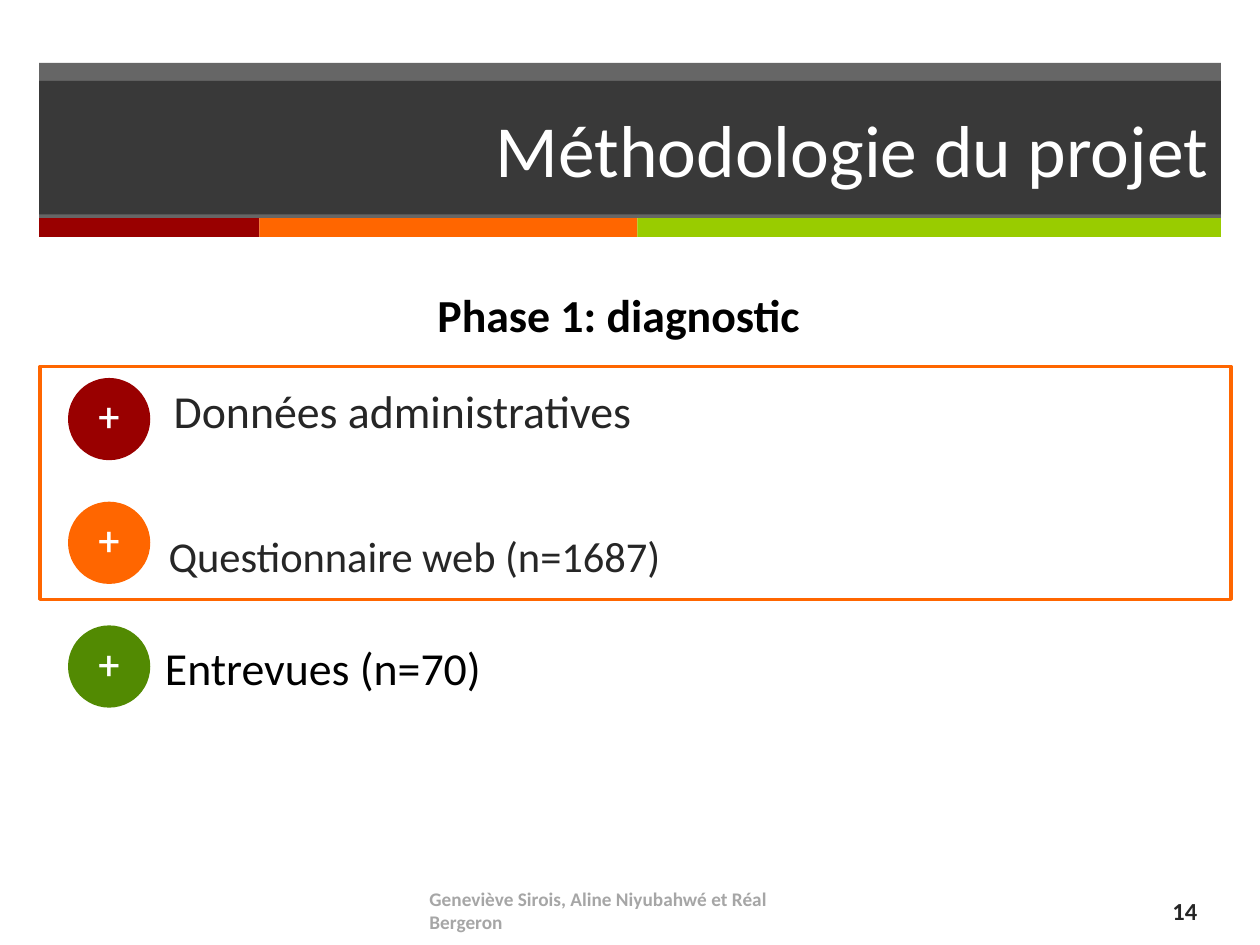
from lxml import etree
from pptx import Presentation
from pptx.dml.color import RGBColor
from pptx.enum.shapes import MSO_SHAPE
from pptx.enum.text import MSO_ANCHOR, MSO_AUTO_SIZE, PP_ALIGN
from pptx.oxml.ns import qn
from pptx.util import Pt

RECTANGLE, ELLIPSE = MSO_SHAPE.RECTANGLE, MSO_SHAPE.OVAL
TOP, MIDDLE = MSO_ANCHOR.TOP, MSO_ANCHOR.MIDDLE
LEFT, CENTER, RIGHT = PP_ALIGN.LEFT, PP_ALIGN.CENTER, PP_ALIGN.RIGHT
NO_AUTOFIT = MSO_AUTO_SIZE.NONE

DARK = RGBColor(0x26, 0x26, 0x26)
RED = RGBColor(0x99, 0x00, 0x00)
ORANGE = RGBColor(0xFF, 0x66, 0x00)
LIME = RGBColor(0x99, 0xCC, 0x00)
GREEN = RGBColor(0x52, 0x8A, 0x02)
GRAY = RGBColor(0xA6, 0xA6, 0xA6)
BLACK = RGBColor(0x00, 0x00, 0x00)
WHITE = RGBColor(0xFF, 0xFF, 0xFF)


def write(shape, text, size, color, font="Calibri", bold=False, align=LEFT,
          anchor=MIDDLE, insets=(7.2, 3.6, 7.2, 3.6), spacing=1.0):
    frame = shape.text_frame
    frame.word_wrap = True
    frame.auto_size = NO_AUTOFIT
    frame.vertical_anchor = anchor
    (frame.margin_left, frame.margin_top,
     frame.margin_right, frame.margin_bottom) = map(Pt, insets)
    para = frame.paragraphs[0]
    para.alignment = align
    para.line_spacing = spacing
    span = para.add_run()
    span.text = text
    span.font.name = font
    span.font.size = Pt(size)
    span.font.bold = bold
    span.font.color.rgb = color


def add_text(page, box, text, size, color, **options):
    write(page.shapes.add_textbox(*map(Pt, box)), text, size, color, **options)


def paint(shape, color, opacity=100):
    shape.fill.solid()
    shape.fill.fore_color.rgb = color
    if opacity < 100:
        tone = shape._element.spPr.find(qn("a:solidFill"))[0]
        etree.SubElement(tone, qn("a:alpha"), val=str(opacity * 1000))


def add_filled(page, kind, box, color, opacity=100):
    shape = page.shapes.add_shape(kind, *map(Pt, box))
    shape.shadow.inherit = False
    shape.line.fill.background()
    paint(shape, color, opacity)
    return shape


def build_header(page, box, text):
    left, top, width, height = box
    stripe = 10.8

    # Translucent band with a colour stripe along its foot
    add_filled(page, RECTANGLE, (left, top, width, height - stripe), DARK, 70)
    start = left
    for color, length in ((RED, 126), (ORANGE, 216), (LIME, width - 342)):
        add_filled(page, RECTANGLE,
                   (start, top + height - stripe, length, stripe), color)
        start += length

    # Title, raised above the band
    title = page.shapes.title
    title.left, title.top = Pt(left), Pt(top + 10.2)
    title.width, title.height = Pt(width), Pt(76.3)
    paint(title, DARK, 70)
    write(title, text, 42, WHITE, align=RIGHT)
    page.shapes._spTree.append(title._element)


def build_methods(page, box):
    left, top, width, height = box

    # Frame around the first two methods
    frame = page.shapes.add_shape(RECTANGLE, *map(Pt, box))
    frame.shadow.inherit = False
    frame.fill.background()
    frame.line.color.rgb = ORANGE
    frame.line.width = Pt(2)

    # Each method: bullet colour, wording, size, text colour,
    # text offset from the frame, left inset, anchor
    methods = (
        (RED, "Données administratives", 26.2, DARK, 65.5, 5.8, 10.8, TOP),
        (ORANGE, "Questionnaire web (n=1687)", 24.3, DARK, 62.6, 90, 10.8, TOP),
        (GREEN, "Entrevues (n=70)", 26.2, BLACK, 62.6, 138.2, 8.7, MIDDLE),
    )
    diameter, pitch = 47, 70.7
    for row, (tint, text, size, color, across, down, inset,
              anchor) in enumerate(methods):
        bullet = add_filled(page, ELLIPSE,
                            (left + 15.9, top + 6.5 + row * pitch,
                             diameter, diameter), tint)
        write(bullet, "+", 22.5, WHITE, font="Roboto", align=CENTER,
              insets=(5, 2.9, 5, 2.9), spacing=0.9)
        add_text(page, (left + across, top + down, width - across + 9, 67),
                 text, size, color, anchor=anchor,
                 insets=(inset, 3.6, 5, 3.6))


def build_footer(page, box, authors, number):
    left, top, width, height = box
    add_text(page, (left, top, 243, height), authors, 11, GRAY, bold=True)
    add_text(page, (left + width - 162, top, 162, height), number, 14, DARK,
             bold=True, align=RIGHT)


def main():
    deck = Presentation()
    deck.slide_width, deck.slide_height = Pt(720), Pt(540)
    page = deck.slides.add_slide(deck.slide_layouts[5])

    build_header(page, (22.3, 36, 675.4, 99.4), "Méthodologie du projet")
    add_text(page, (146, 160.5, 415, 39), "Phase 1: diagnostic", 26.2, BLACK,
             bold=True, align=CENTER, anchor=TOP)
    build_methods(page, (23, 209.5, 680.4, 133))
    build_footer(page, (238.3, 509, 453, 22.3),
                 "Geneviève Sirois, Aline Niyubahwé et Réal Bergeron", "14")
    deck.save("out.pptx")


if __name__ == "__main__":
    main()
